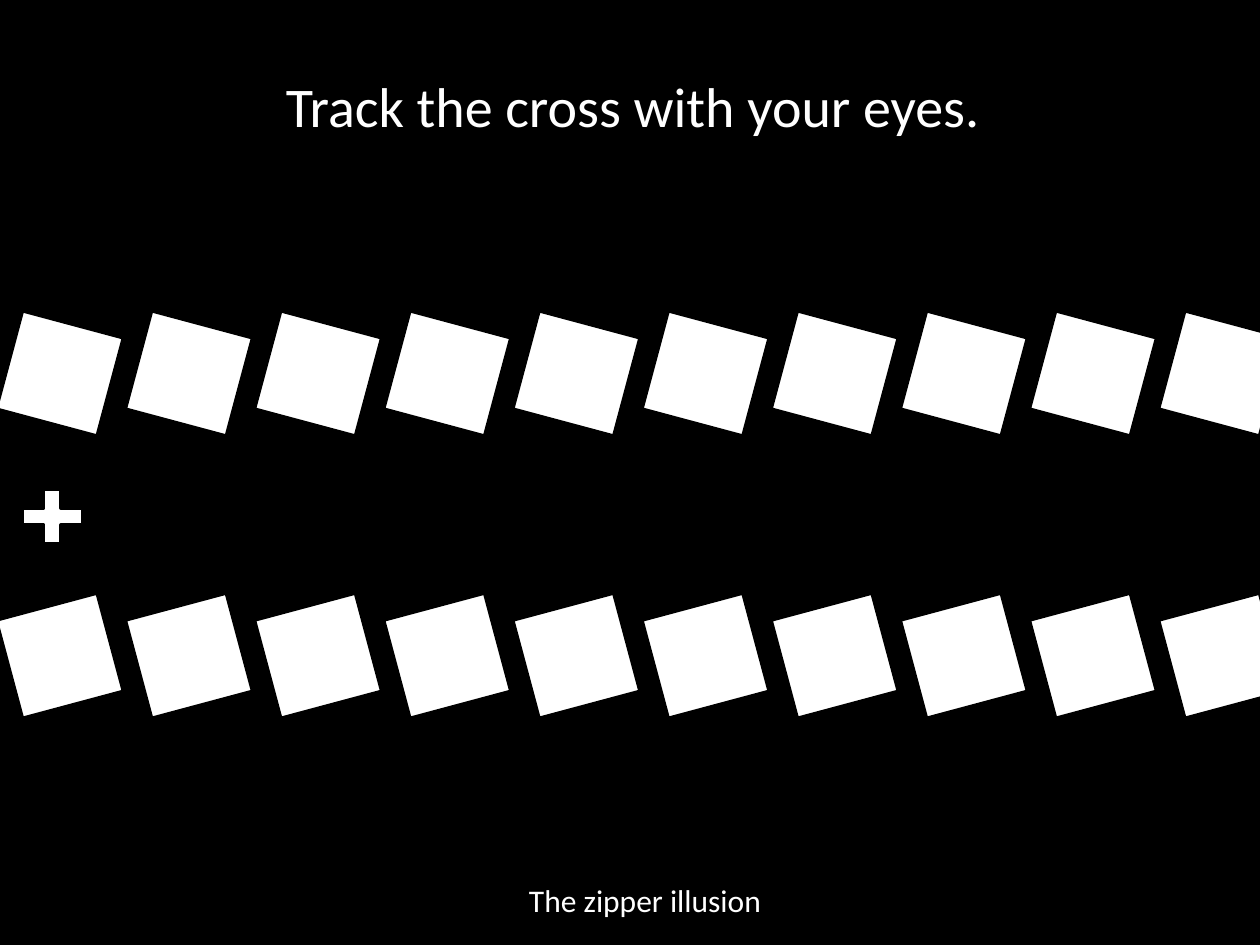
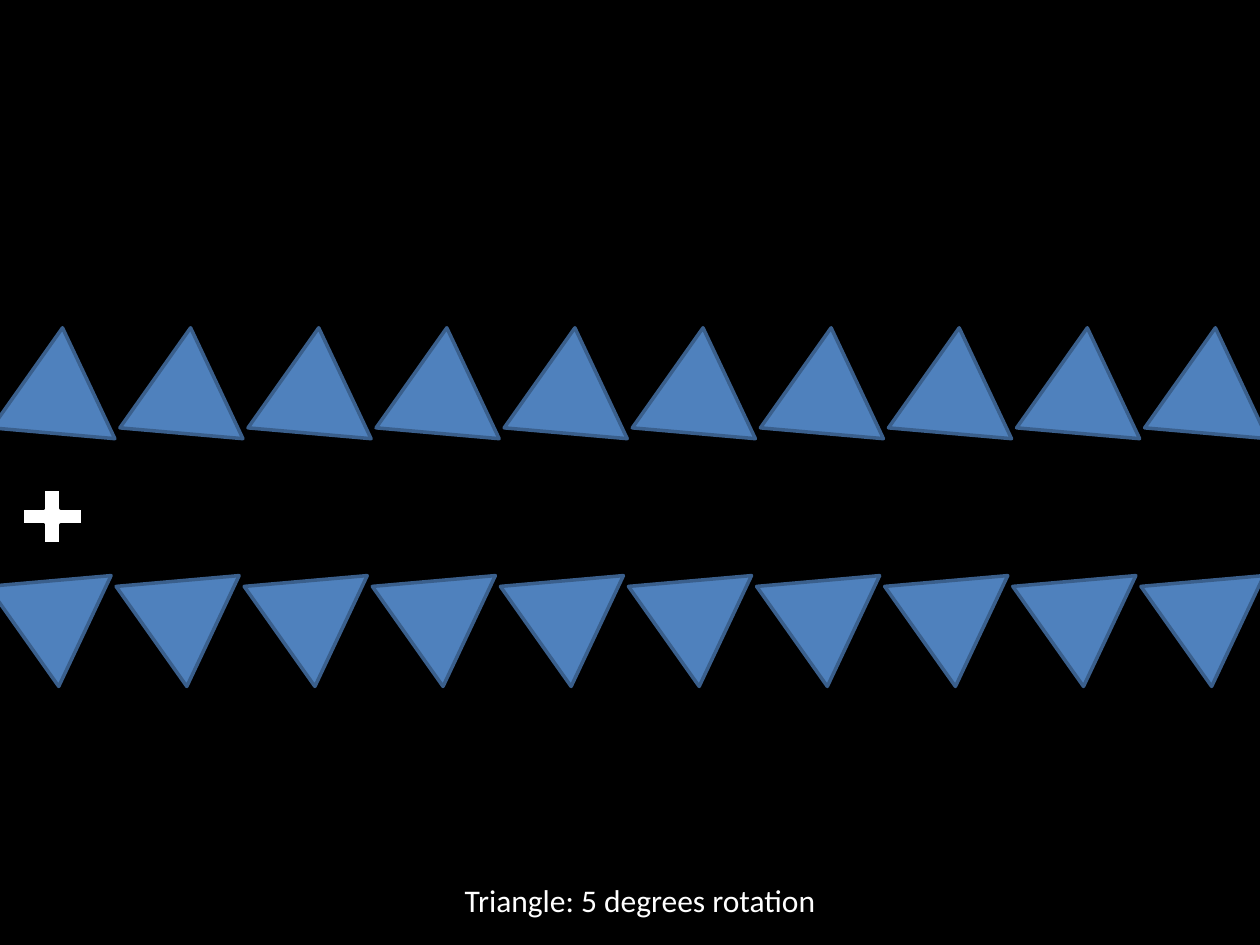
from dataclasses import dataclass

from pptx import Presentation
from pptx.dml.color import RGBColor
from pptx.enum.shapes import MSO_SHAPE
from pptx.enum.text import MSO_ANCHOR, MSO_AUTO_SIZE, PP_ALIGN
from pptx.shapes.autoshape import Shape
from pptx.slide import Slide
from pptx.util import Pt

SQUARE = MSO_SHAPE.RECTANGLE
TRIANGLE = MSO_SHAPE.ISOSCELES_TRIANGLE
PLUS = MSO_SHAPE.MATH_PLUS
ALIGN_LEFT = PP_ALIGN.LEFT
ANCHOR_TOP = MSO_ANCHOR.TOP
GROW_TO_TEXT = MSO_AUTO_SIZE.SHAPE_TO_FIT_TEXT

# Shared style
BLACK = "000000"
WHITE = "FFFFFF"
BLUE = "4F81BD"
DARK_BLUE = "3A5F8C"
FONT = "Calibri"
LINE_WIDTH = 2
TITLE_ONLY_LAYOUT = 5
BLANK_LAYOUT = 6
TILES_PER_ROW = 10


@dataclass(frozen=True)
class Tile:
    """One figure that is repeated along a row; lengths in points."""
    kind: MSO_SHAPE
    width: float
    height: float
    fill: str
    line: str


@dataclass(frozen=True)
class Row:
    """A row of equal tiles; the lower row mirrors the upper one."""
    tile: Tile
    left: float
    top: float
    step: float
    rotation: float
    mirrored: bool = False


SQUARE_TILE = Tile(SQUARE, 59.8, 58.2, WHITE, BLACK)
TRIANGLE_TILE = Tile(TRIANGLE, 70.6, 60.5, BLUE, DARK_BLUE)
CROSS = Tile(PLUS, 46.8, 41.8, WHITE, BLACK)

SQUARE_ROWS = [
    Row(SQUARE_TILE, 4.3, 184.3, 73.8, 15),
    Row(SQUARE_TILE, 4.3, 345.6, 73.8, 345, mirrored=True),
]
TRIANGLE_ROWS = [
    Row(TRIANGLE_TILE, -2.2, 187.2, 73.2, 5),
    Row(TRIANGLE_TILE, -4.4, 331.9, 73.2, 355, mirrored=True),
]


def color(hex_value: str) -> RGBColor:
    return RGBColor.from_string(hex_value)


def place(shape: Shape, left: float, top: float, width: float, height: float) -> None:
    shape.left, shape.top = Pt(left), Pt(top)
    shape.width, shape.height = Pt(width), Pt(height)


def add_tile(slide: Slide, tile: Tile, left: float, top: float) -> Shape:
    shape = slide.shapes.add_shape(
        tile.kind, Pt(left), Pt(top), Pt(tile.width), Pt(tile.height))
    shape.shadow.inherit = False
    shape.fill.solid()
    shape.fill.fore_color.rgb = color(tile.fill)
    shape.line.color.rgb = color(tile.line)
    shape.line.width = Pt(LINE_WIDTH)
    return shape


def add_row(slide: Slide, row: Row) -> None:
    for index in range(TILES_PER_ROW):
        shape = add_tile(slide, row.tile, row.left + index * row.step, row.top)
        shape.rotation = row.rotation
        if row.mirrored:
            shape.element.spPr.xfrm.set("flipV", "1")


def write_line(box: Shape, text: str, size: float) -> None:
    frame = box.text_frame
    frame.text = text
    frame.word_wrap = False
    frame.auto_size = GROW_TO_TEXT
    frame.vertical_anchor = ANCHOR_TOP
    para = frame.paragraphs[0]
    para.alignment = ALIGN_LEFT
    for span in para.runs:
        span.font.name = FONT
        span.font.size = Pt(size)
        span.font.color.rgb = color(WHITE)


def add_caption(slide: Slide, text: str, left: float, width: float) -> None:
    box = slide.shapes.add_textbox(Pt(left), Pt(499.7), Pt(width), Pt(29))
    write_line(box, text, 18)


def add_illusion(page: Slide, rows: list[Row]) -> None:
    for row in rows:
        add_row(page, row)
    add_tile(page, CROSS, 6.5, 274.3)


def main() -> None:
    deck = Presentation()
    deck.slide_width, deck.slide_height = Pt(720), Pt(540)
    background = deck.slide_master.background.fill
    background.solid()
    background.fore_color.rgb = color(BLACK)

    # Squares
    page = deck.slides.add_slide(deck.slide_layouts[TITLE_ONLY_LAYOUT])
    add_illusion(page, SQUARE_ROWS)
    title = page.shapes.title
    place(title, 156.2, 37.4, 419, 46)
    write_line(title, "Track the cross with your eyes.", 32)
    add_caption(page, "The zipper illusion", 295.2, 148.3)

    # Triangles
    page = deck.slides.add_slide(deck.slide_layouts[BLANK_LAYOUT])
    add_illusion(page, TRIANGLE_ROWS)
    add_caption(page, "Triangle: 5 degrees rotation", 258.5, 218.9)

    deck.save("out.pptx")


if __name__ == "__main__":
    main()
